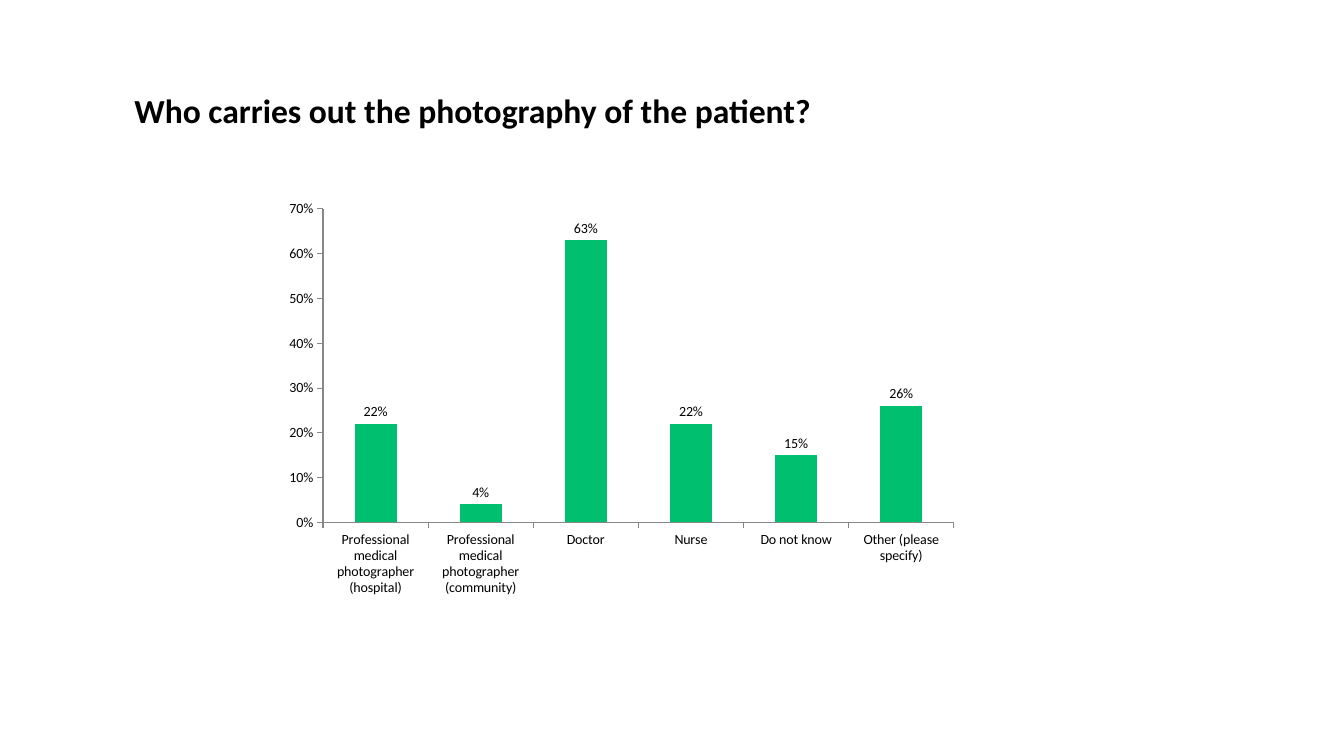
"""Build a slide with a column chart of who photographs the patient."""
from dataclasses import dataclass

from lxml import etree
from pptx import Presentation
from pptx.chart.chart import Chart
from pptx.chart.data import CategoryChartData
from pptx.dml.color import RGBColor
from pptx.enum.chart import XL_CHART_TYPE, XL_LABEL_POSITION, XL_TICK_MARK
from pptx.enum.text import MSO_ANCHOR, MSO_AUTO_SIZE, PP_ALIGN
from pptx.oxml.ns import qn
from pptx.slide import Slide
from pptx.util import Pt

COLUMNS = XL_CHART_TYPE.COLUMN_CLUSTERED
OUTSIDE_END = XL_LABEL_POSITION.OUTSIDE_END
TICK_OUT = XL_TICK_MARK.OUTSIDE
TICK_NONE = XL_TICK_MARK.NONE
MIDDLE = MSO_ANCHOR.MIDDLE
GROW = MSO_AUTO_SIZE.SHAPE_TO_FIT_TEXT
CENTER = PP_ALIGN.CENTER
TITLE_ONLY = 5


@dataclass(frozen=True)
class Theme:
    font: str = "Calibri"
    text: RGBColor = RGBColor(0, 0, 0)
    bar: RGBColor = RGBColor(0x00, 0xBF, 0x6F)
    axis: RGBColor = RGBColor(0x87, 0x87, 0x87)
    title_size: float = 24
    chart_size: float = 10


@dataclass(frozen=True)
class Box:
    left: float
    top: float
    width: float
    height: float


@dataclass(frozen=True)
class Answer:
    label: str
    share: float


THEME = Theme()
TITLE_BOX = Box(86.4, 60.5, 502.5, 36.7)
CHART_BOX = Box(157, 134, 646.5, 374.4)
PLOT_BOX = Box(230.7, 149.35, 450.6, 223.9)
ANSWERS = (
    Answer("Professional medical photographer (hospital)", 0.22),
    Answer("Professional medical photographer (community)", 0.04),
    Answer("Doctor", 0.63),
    Answer("Nurse", 0.22),
    Answer("Do not know", 0.15),
    Answer("Other (please specify)", 0.26),
)


def set_title(s: Slide, text: str, box: Box) -> None:
    """Place and format the slide title."""
    sp = s.shapes.title
    sp.left, sp.top = Pt(box.left), Pt(box.top)
    sp.width, sp.height = Pt(box.width), Pt(box.height)
    tf = sp.text_frame
    tf.word_wrap = False
    tf.auto_size = GROW
    tf.vertical_anchor = MIDDLE
    p = tf.paragraphs[0]
    p.alignment = CENTER
    r = p.add_run()
    r.text = text
    r.font.name = THEME.font
    r.font.size = Pt(THEME.title_size)
    r.font.bold = True
    r.font.color.rgb = THEME.text


def place_plot(chart: Chart, frame: Box, plot: Box) -> None:
    """Fix the inner plot area as fractions of the chart frame."""
    area = chart.element.find(f".//{qn('c:plotArea')}")
    for old in area.findall(qn("c:layout")):
        area.remove(old)
    layout = etree.Element(qn("c:layout"))
    manual = etree.SubElement(layout, qn("c:manualLayout"))
    settings = {
        "layoutTarget": "inner",
        "xMode": "edge",
        "yMode": "edge",
        "x": (plot.left - frame.left) / frame.width,
        "y": (plot.top - frame.top) / frame.height,
        "w": plot.width / frame.width,
        "h": plot.height / frame.height,
    }
    for tag, value in settings.items():
        etree.SubElement(manual, qn(f"c:{tag}")).set("val", str(value))
    area.insert(0, layout)


def add_answers_chart(s: Slide, answers: tuple[Answer, ...], box: Box) -> None:
    """Draw the share of each answer as a column."""
    data = CategoryChartData(number_format="0%")
    data.categories = [a.label for a in answers]
    data.add_series("Series 1", [a.share for a in answers])
    chart = s.shapes.add_chart(
        COLUMNS, Pt(box.left), Pt(box.top), Pt(box.width), Pt(box.height), data
    ).chart
    chart.has_title = False
    chart.has_legend = False
    chart.font.name = THEME.font
    chart.font.size = Pt(THEME.chart_size)
    chart.font.color.rgb = THEME.text

    for axis in (chart.category_axis, chart.value_axis):
        axis.has_major_gridlines = False
        axis.major_tick_mark = TICK_OUT
        axis.minor_tick_mark = TICK_NONE
        axis.format.line.color.rgb = THEME.axis
        axis.format.line.width = Pt(0.75)
    values = chart.value_axis
    values.minimum_scale, values.maximum_scale, values.major_unit = 0, 0.7, 0.1
    values.tick_labels.number_format = "0%"
    values.tick_labels.number_format_is_linked = False

    plot = chart.plots[0]
    plot.gap_width = 150
    plot.vary_by_categories = False
    series = plot.series[0]
    series.format.fill.solid()
    series.format.fill.fore_color.rgb = THEME.bar
    labels = series.data_labels
    labels.show_value = True
    labels.number_format = "0%"
    labels.number_format_is_linked = False
    labels.position = OUTSIDE_END
    place_plot(chart, box, PLOT_BOX)


def main() -> None:
    """Build and save the slide."""
    prs = Presentation()
    prs.slide_width, prs.slide_height = Pt(960), Pt(540)
    s = prs.slides.add_slide(prs.slide_layouts[TITLE_ONLY])
    add_answers_chart(s, ANSWERS, CHART_BOX)
    set_title(s, "Who carries out the photography of the patient?", TITLE_BOX)
    prs.save("out.pptx")


if __name__ == "__main__":
    main()
